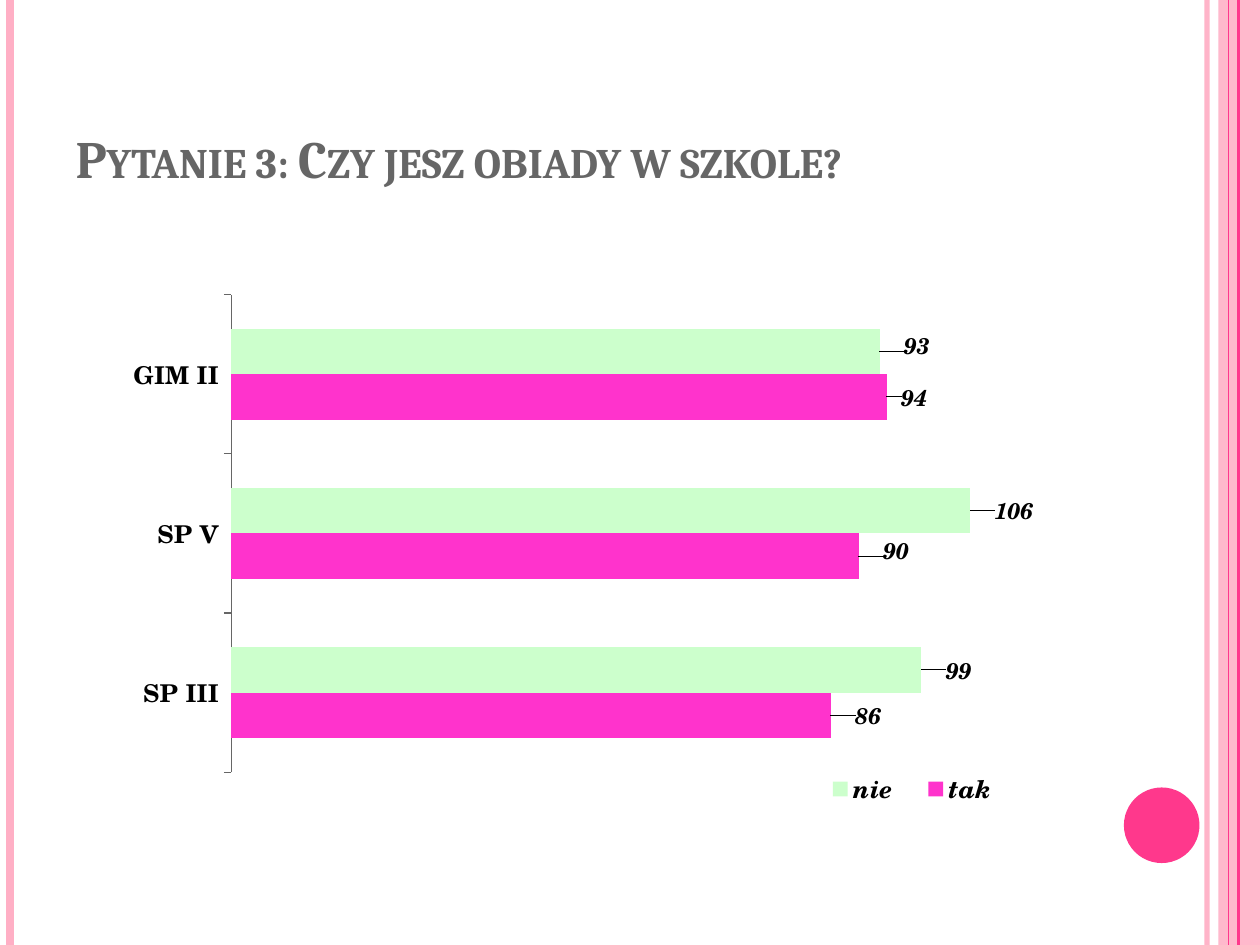
"""Build the survey slide on school lunches with a clustered bar chart."""
from lxml import etree
from pptx import Presentation
from pptx.chart.data import CategoryChartData
from pptx.dml.color import RGBColor
from pptx.enum.chart import XL_CHART_TYPE, XL_LABEL_POSITION, XL_LEGEND_POSITION, XL_TICK_MARK
from pptx.enum.shapes import MSO_CONNECTOR, MSO_SHAPE
from pptx.enum.text import MSO_ANCHOR, PP_ALIGN
from pptx.oxml import parse_xml
from pptx.oxml.ns import nsdecls, qn
from pptx.util import Inches, Pt

BAR = XL_CHART_TYPE.BAR_CLUSTERED
OUTSIDE = XL_LABEL_POSITION.OUTSIDE_END
BOTTOM = XL_LEGEND_POSITION.BOTTOM
STRAIGHT = MSO_CONNECTOR.STRAIGHT
PINK = RGBColor(0xFF, 0xAF, 0xC5)
ROSE = RGBColor(0xFF, 0x38, 0x8C)
MAGENTA = RGBColor(0xFF, 0x33, 0xCC)
MINT = RGBColor(0xCC, 0xFF, 0xCC)
GREY = RGBColor(0x66, 0x66, 0x66)
BLACK = RGBColor(0, 0, 0)
FONT = "TeX Gyre Schola"


def set_alpha(shape, percent):
    color = next(shape._element.spPr.iter(qn("a:srgbClr")))
    etree.SubElement(color, qn("a:alpha")).set("val", str(percent * 1000))


def layout(**values):
    tags = "".join(f'<c:{k} val="{v}"/>' for k, v in values.items())
    return parse_xml(f'<c:layout {nsdecls("c")}><c:manualLayout>{tags}</c:manualLayout></c:layout>')


prs = Presentation()
prs.slide_width, prs.slide_height = Inches(10), Inches(7.5)
W, H = prs.slide_width, prs.slide_height
s = prs.slides.add_slide(prs.slide_layouts[5])

band = s.shapes.add_shape(MSO_SHAPE.RECTANGLE, Inches(9.67), 0, W - Inches(9.67), H)
dot = s.shapes.add_shape(MSO_SHAPE.OVAL, Inches(8.92), Inches(6.25), Inches(0.6), Inches(0.6))
for sp, color in ((band, PINK), (dot, ROSE)):
    sp.shadow.inherit = False
    sp.fill.solid()
    sp.fill.fore_color.rgb = color
    sp.line.fill.background()
set_alpha(band, 87)

for x, color, width, alpha in ((9.58, PINK, 3, 93), (0.08, PINK, 4.5, 100),
                               (9.83, ROSE, 1.5, 100), (9.75, ROSE, 0.75, 100)):
    rule = s.shapes.add_connector(STRAIGHT, Inches(x), 0, Inches(x), H)
    rule.line.color.rgb = color
    rule.line.width = Pt(width)
    if alpha < 100:
        set_alpha(rule, alpha)
    etree.SubElement(rule._element.spPr, qn("a:effectLst"))

title = s.shapes.title
title.left, title.top, title.width, title.height = Inches(0.5), Inches(0.3), Inches(8.17), Inches(1.25)
tf = title.text_frame
tf.vertical_anchor = MSO_ANCHOR.BOTTOM
p = tf.paragraphs[0]
p.alignment = PP_ALIGN.LEFT
r = p.add_run()
r.text = "Pytanie 3: Czy jesz obiady w szkole?"
r.font.name, r.font.size, r.font.bold = "Cambria", Pt(30), True
r.font.color.rgb = GREY
r.font._element.set("cap", "small")

data = CategoryChartData()
data.categories = ["SP III", "SP V", "GIM II"]
data.add_series("tak", (86, 90, 94))
data.add_series("nie", (99, 106, 93))
chart = s.shapes.add_chart(BAR, Inches(0.91), Inches(2.25), Inches(7.72), Inches(4.41), data).chart
chart.has_title = False
chart.font.name, chart.font.size = FONT, Pt(10)
chart.font.color.rgb = BLACK

plot = chart.plots[0]
plot.gap_width = 150
plot.vary_by_categories = False
area = chart._chartSpace.chart.plotArea
for old in area.findall(qn("c:layout")):
    area.remove(old)
area.insert(0, layout(layoutTarget="inner", xMode="edge", yMode="edge", x=0.12, y=0.02, w=0.86, h=0.86))

axis = chart.category_axis
axis.major_tick_mark = XL_TICK_MARK.OUTSIDE
axis.format.line.color.rgb = GREY
axis.format.line.width = Pt(0.75)
values = chart.value_axis
values.minimum_scale, values.maximum_scale = 0, 120
values.has_major_gridlines = False
values.visible = False

chart.has_legend = True
legend = chart.legend
legend.position = BOTTOM
legend.include_in_layout = False
for old in legend._element.findall(qn("c:layout")):
    legend._element.remove(old)
legend._element.find(qn("c:legendPos")).addnext(
    layout(xMode="edge", yMode="edge", x=0.71, y=0.87, w=0.22, h=0.08))
for font, italic in ((axis.tick_labels.font, False), (legend.font, True)):
    font.name, font.size, font.bold, font.italic = FONT, Pt(14), True, italic
    font.color.rgb = BLACK

shifts = (((0.02, 0), (0.02, -0.01), (0.01, 0)), ((0.02, 0), (0.02, 0), (0.02, -0.01)))
for series, color, offsets in zip(plot.series, (MAGENTA, MINT), shifts):
    series.format.fill.solid()
    series.format.fill.fore_color.rgb = color
    series.data_labels.show_value = True
    for i, (dx, dy) in enumerate(offsets):
        label = series.points[i].data_label
        font = label.font
        font.name, font.size, font.bold, font.italic = FONT, Pt(13), True, True
        font.color.rgb = BLACK
        label.position = OUTSIDE
        dLbl = series._element.find(qn("c:dLbls")).findall(qn("c:dLbl"))[i]
        dLbl.find(qn("c:idx")).addnext(layout(x=dx, y=dy))

prs.save("out.pptx")
